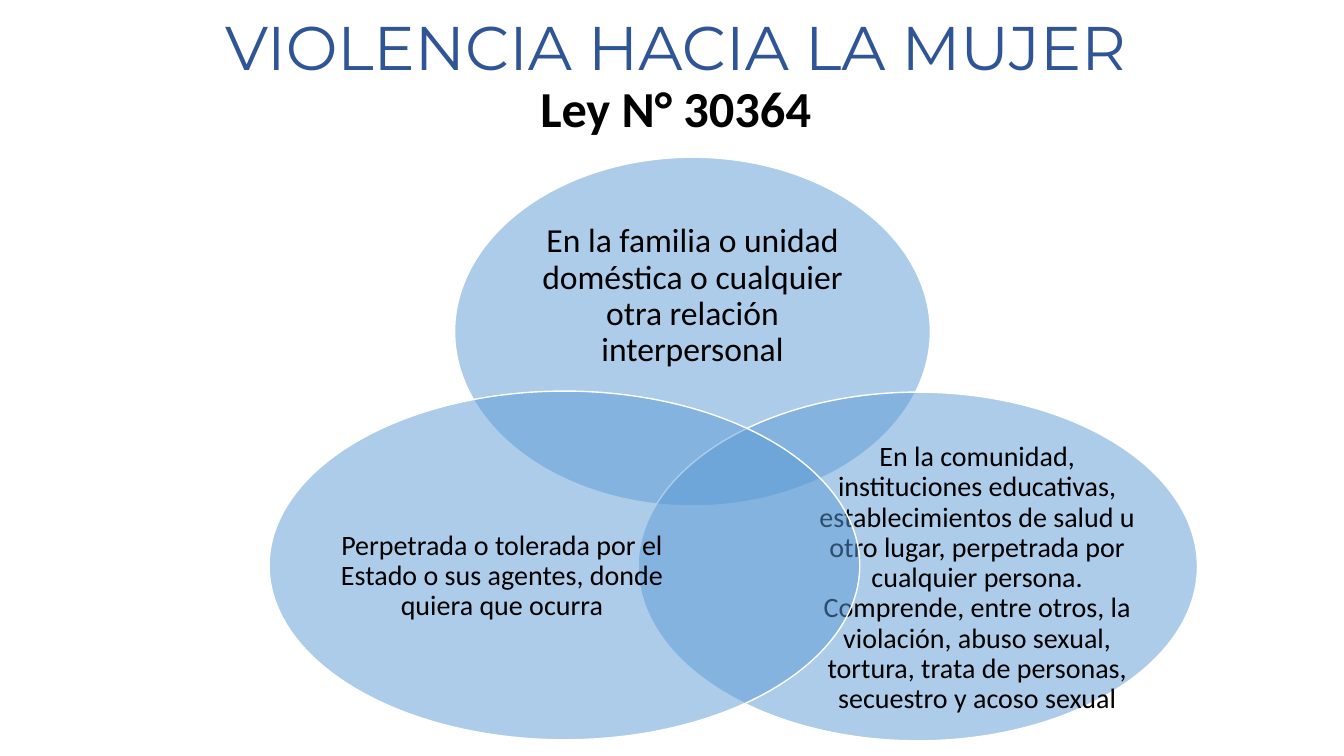
from lxml import etree
from pptx import Presentation
from pptx.dml.color import RGBColor
from pptx.enum.shapes import MSO_SHAPE
from pptx.enum.text import MSO_ANCHOR, PP_ALIGN
from pptx.oxml.ns import qn
from pptx.util import Pt

ELLIPSE = MSO_SHAPE.OVAL
MIDDLE = MSO_ANCHOR.MIDDLE
CENTER = PP_ALIGN.CENTER
BLANK_LAYOUT = 6
CIRCLE_HEIGHT = 249.12

# Each set: ellipse (left, top, width), label (left, top, width, height), size, text
VENN_SETS = [
    ((324.72, 112.32, 339.84), (370.08, 155.52, 249.12, 112.32), 24,
     "En la familia o unidad doméstica o cualquier otra relación interpersonal"),
    ((455.76, 280.08, 399.6), (578.16, 344.88, 239.76, 136.8), 20,
     "En la comunidad, instituciones educativas, establecimientos de salud u otro lugar, "
     "perpetrada por cualquier persona. Comprende, entre otros, la violación, abuso sexual, "
     "tortura, trata de personas, secuestro y acoso sexual"),
    ((192.24, 279.36, 421.92), (231.84, 343.44, 253.44, 136.8), 20,
     "Perpetrada o tolerada por el Estado o sus agentes, donde quiera que ocurra"),
]


def color(value):
    return RGBColor.from_string(value)


class VennSlide:
    body_font = "Calibri"
    title_font = "Montserrat"
    black = "000000"
    title_blue = "2F5597"
    fill_blue = "5B9BD5"
    white = "FFFFFF"

    def __init__(self, page):
        self.page = page

    def text_frame(self, left, top, width, height):
        box = self.page.shapes.add_textbox(Pt(left), Pt(top), Pt(width), Pt(height))
        frame = box.text_frame
        frame.word_wrap = True
        frame.vertical_anchor = MIDDLE
        return frame

    def style(self, para, size, font=body_font, text_color=black, bold=False):
        para.alignment = CENTER
        para.line_spacing = 0.9
        para.font.name = font
        para.font.size = Pt(size)
        para.font.bold = bold
        para.font.color.rgb = color(text_color)

    def title(self, heading, subtitle):
        frame = self.text_frame(19.44, 0, 926.64, 111.6)
        frame.text = f"{heading}\n{subtitle}"
        heading_para, subtitle_para = frame.paragraphs
        self.style(heading_para, 44, self.title_font, self.title_blue)
        self.style(subtitle_para, 36, bold=True)

    def ellipse(self, left, top, width):
        """Add a half-transparent ellipse with a thin white outline."""
        shape = self.page.shapes.add_shape(
            ELLIPSE, Pt(left), Pt(top), Pt(width), Pt(CIRCLE_HEIGHT))
        shape.shadow.inherit = False
        shape.fill.solid()
        shape.fill.fore_color.rgb = color(self.fill_blue)
        fill = shape.element.spPr.find(qn("a:solidFill"))
        etree.SubElement(fill[0], qn("a:alpha"), val="50000")
        shape.line.color.rgb = color(self.white)
        shape.line.width = Pt(1)

    def label(self, place, size, text):
        frame = self.text_frame(*place)
        frame.margin_left = frame.margin_right = 0
        frame.margin_top = frame.margin_bottom = 0
        frame.text = text
        self.style(frame.paragraphs[0], size)


def main():
    deck = Presentation()
    deck.slide_width, deck.slide_height = Pt(960), Pt(540)
    venn = VennSlide(deck.slides.add_slide(deck.slide_layouts[BLANK_LAYOUT]))
    venn.title("VIOLENCIA HACIA LA MUJER", "Ley N° 30364")
    for outline, place, size, text in VENN_SETS:
        venn.ellipse(*outline)
        venn.label(place, size, text)
    deck.save("out.pptx")


if __name__ == "__main__":
    main()
